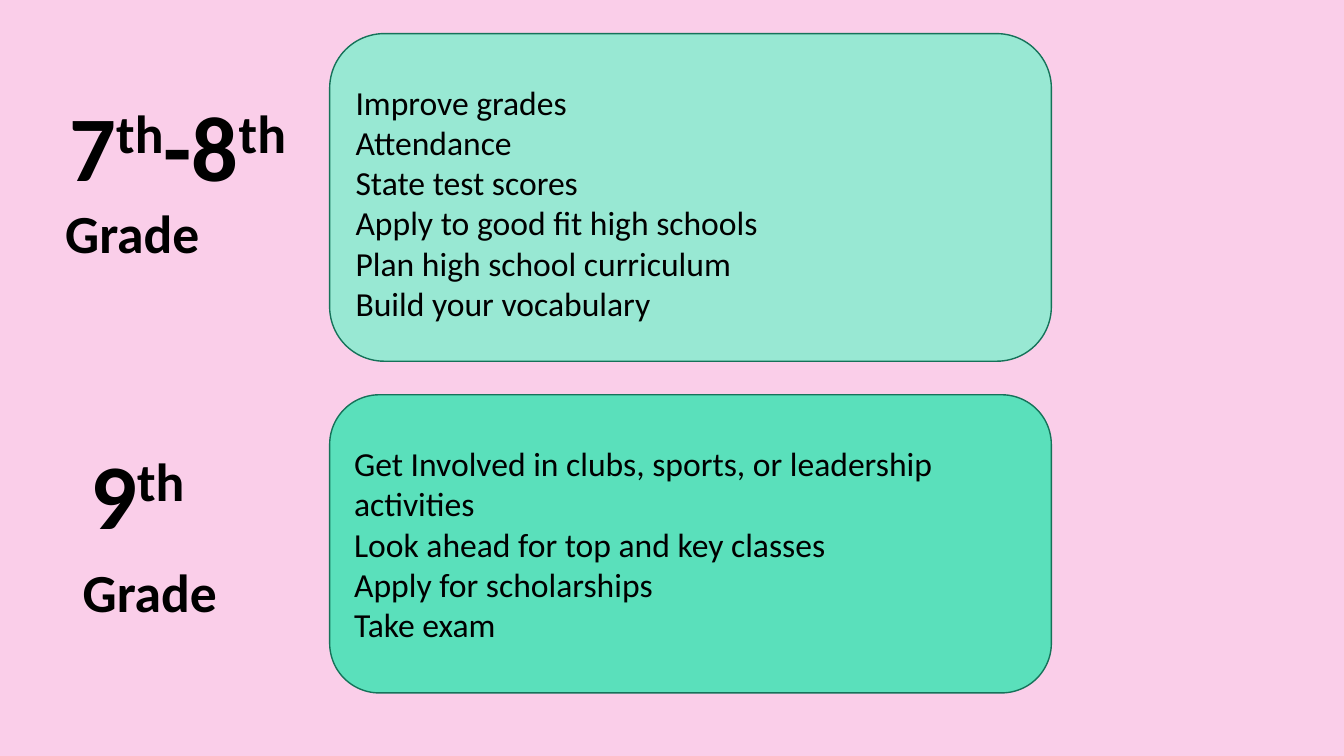
from dataclasses import dataclass

from lxml.etree import SubElement
from pptx import Presentation
from pptx.dml.color import RGBColor as Rgb
from pptx.enum.shapes import MSO_SHAPE as Shape
from pptx.enum.text import MSO_ANCHOR as Anchor, PP_ALIGN as Align
from pptx.oxml.ns import qn
from pptx.util import Pt


@dataclass(frozen=True)
class Theme:
    font: str = "Calibri"
    back: str = "FACEE9"
    ink: str = "000000"
    edge: str = "157259"
    mint: str = "91EAD2"
    jade: str = "5AE0BB"
    grade: int = 66
    body: int = 24


THEME = Theme()


def put_text(para, text, size=THEME.body, bold=False, space=1.0, indent=0):
    """Fill a paragraph; every second part between ^ marks is superscript."""
    para.alignment = Align.LEFT
    para.line_spacing = space
    para._p.get_or_add_pPr().set("marL", str(Pt(indent)))
    for i, part in enumerate(text.split("^")):
        if not part:
            continue
        run = para.add_run()
        run.text = part
        font = run.font
        font.name, font.size, font.bold = THEME.font, Pt(size), bold
        font.color.rgb = Rgb.from_string(THEME.ink)
        if i % 2:
            run._r.get_or_add_rPr().set("baseline", "30000")


def put_lines(frame, lines):
    """Write (text, format) pairs as the paragraphs of a frame."""
    frame.word_wrap = True
    for i, (text, form) in enumerate(lines):
        para = frame.add_paragraph() if i else frame.paragraphs[0]
        put_text(para, text, **form)


def add_label(slide, box, grade, indent, space):
    label = slide.shapes.add_textbox(*map(Pt, box))
    form = dict(size=THEME.grade, bold=True, space=space)
    put_lines(label.text_frame,
              [(grade, form | {"indent": indent}), ("^Grade^", form)])


def add_card(slide, box, tasks, fill, alpha=100, drop=0):
    """Draw a rounded card; drop is extra room above its centred text."""
    card = slide.shapes.add_shape(Shape.ROUNDED_RECTANGLE, *map(Pt, box))
    card.shadow.inherit = False
    card.fill.solid()
    card.fill.fore_color.rgb = Rgb.from_string(fill)
    if alpha < 100:
        tint = card._element.spPr.find(qn("a:solidFill"))[0]
        SubElement(tint, qn("a:alpha"), val=str(alpha * 1000))
    card.line.color.rgb = Rgb.from_string(THEME.edge)
    card.line.width = Pt(1)
    frame = card.text_frame
    frame.vertical_anchor = Anchor.MIDDLE
    frame.margin_top = Pt(3.6 + drop)
    put_lines(frame, [(task, {}) for task in tasks])


def main():
    deck = Presentation()
    deck.slide_width, deck.slide_height = Pt(960), Pt(540)
    slide = deck.slides.add_slide(deck.slide_layouts[6])
    back = slide.background.fill
    back.solid()
    back.fore_color.rgb = Rgb.from_string(THEME.back)

    left, width = 235.5, 515.5
    add_label(slide, (39.5, 69, 190, 130), "7^th^-8^th", indent=3, space=0.9)
    add_card(slide, (left, 24, width, 234), [
        "Improve grades",
        "Attendance",
        "State test scores",
        "Apply to good fit high schools",
        "Plan high school curriculum",
        "Build your vocabulary",
    ], THEME.mint, alpha=93, drop=7)

    add_label(slide, (52, 308.5, 136, 167), "9^th^", indent=5.5, space=1.0)
    add_card(slide, (left, 282, width, 213), [
        "Get Involved in clubs, sports, or leadership activities",
        "Look ahead for top and key classes",
        "Apply for scholarships",
        "Take exam",
    ], THEME.jade)
    deck.save("out.pptx")


if __name__ == "__main__":
    main()
